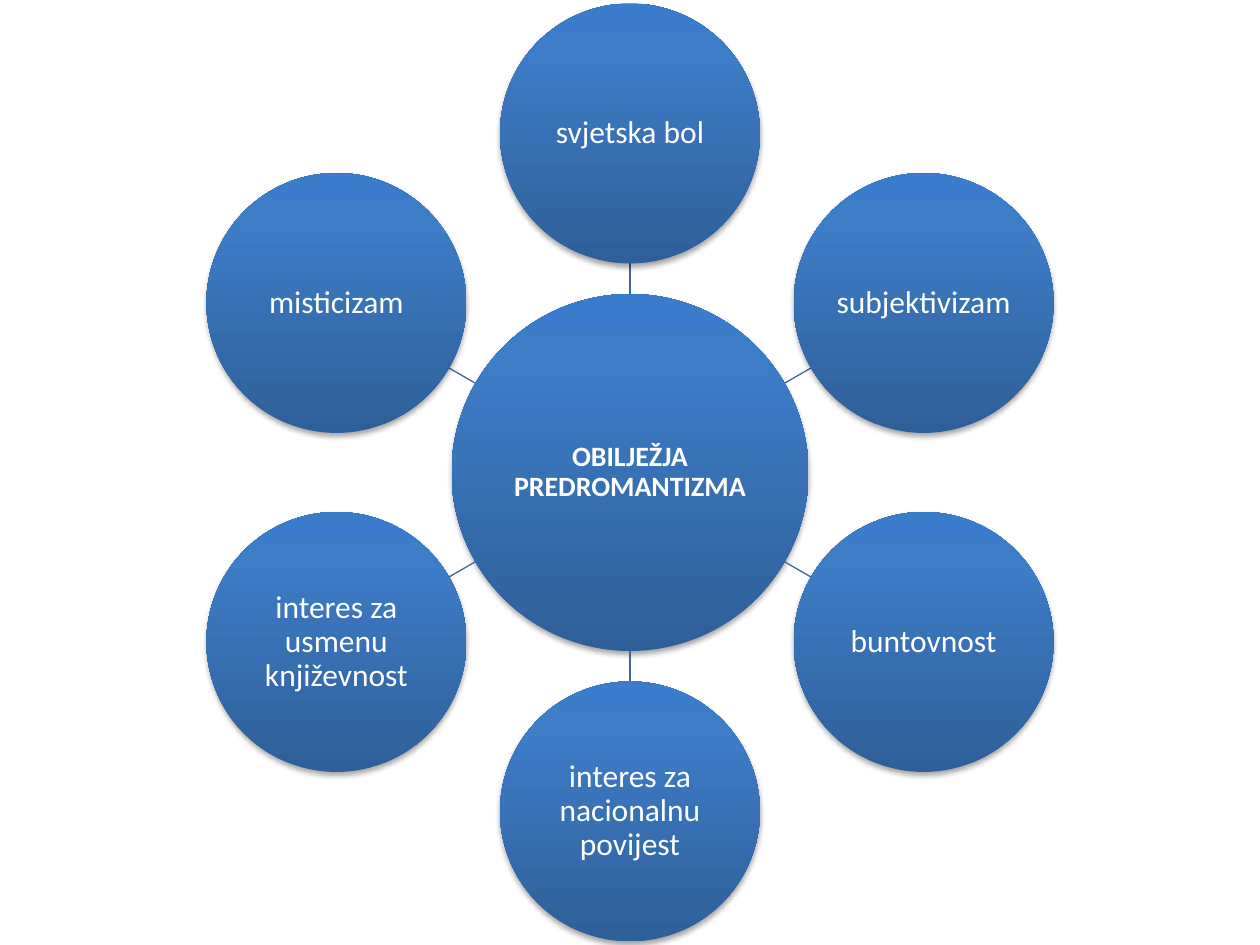
import copy
import dataclasses
import math

import pptx
import pptx.dml.color
import pptx.enum.shapes
import pptx.enum.text
import pptx.oxml
import pptx.oxml.ns
import pptx.slide
import pptx.util
from lxml import etree

EMU_PER_PX = 914400 / 126
SLIDE_WIDTH, SLIDE_HEIGHT = 1260, 945
ORBIT = 339  # from the hub's centre to each feature's centre
TEXT_INSET = 1


@dataclasses.dataclass(frozen=True)
class Theme:
    font: str = "Calibri"
    text: str = "FFFFFF"
    spoke: str = "3F6797"
    gradient: tuple[tuple[float, str], ...] = (
        (0, "2F5F99"), (0.8, "3D7CC7"), (1, "3A7CCB"))
    shadow: str = "000000"
    hub_size: int = 16
    feature_size: int = 18
    line_spacing: float = 0.9
    spoke_width: float = 0.75


@dataclasses.dataclass(frozen=True)
class Circle:
    label: str
    x: float
    y: float
    diameter: int
    font_size: int
    bold: bool = False


THEME = Theme()
HUB = Circle("OBILJEŽJA PREDROMANTIZMA", SLIDE_WIDTH / 2, SLIDE_HEIGHT / 2,
             357, THEME.hub_size, bold=True)
FEATURE_DIAMETER = 260
FEATURES = (  # clockwise from the top
    "svjetska bol",
    "subjektivizam",
    "buntovnost",
    "interes za nacionalnu povijest",
    "interes za usmenu književnost",
    "misticizam",
)


def px(length: float) -> pptx.util.Emu:
    return pptx.util.Emu(round(length * EMU_PER_PX))


def rgb(value: str) -> pptx.dml.color.RGBColor:
    return pptx.dml.color.RGBColor.from_string(value)


def around_hub(angle: float, distance: float) -> tuple[float, float]:
    return HUB.x + distance * math.cos(angle), HUB.y + distance * math.sin(angle)


def fill_with_gradient(shape) -> None:
    shape.fill.gradient()
    shape.fill.gradient_angle = 90
    stop_list = shape.element.spPr.find(".//" + pptx.oxml.ns.qn("a:gsLst"))
    stop_list.append(copy.deepcopy(stop_list[-1]))
    for stop, (position, color) in zip(shape.fill.gradient_stops, THEME.gradient):
        stop.position = position
        stop.color.rgb = rgb(color)


def cast_shadow(shape) -> None:
    shape.shadow.inherit = False
    effects = shape.element.spPr.find(pptx.oxml.ns.qn("a:effectLst"))
    blur, distance = pptx.util.Pt(3.1), pptx.util.Pt(1.8)
    effects.append(pptx.oxml.parse_xml(
        f'<a:outerShdw {pptx.oxml.ns.nsdecls("a")} blurRad="{blur}" '
        f'dist="{distance}" dir="5400000" rotWithShape="0">'
        f'<a:srgbClr val="{THEME.shadow}"><a:alpha val="35000"/></a:srgbClr>'
        '</a:outerShdw>'))


def draw_circle(slide: pptx.slide.Slide, circle: Circle) -> None:
    radius = circle.diameter / 2
    disc = slide.shapes.add_shape(
        pptx.enum.shapes.MSO_SHAPE.OVAL, px(circle.x - radius),
        px(circle.y - radius), px(circle.diameter), px(circle.diameter))
    fill_with_gradient(disc)
    disc.line.fill.background()
    cast_shadow(disc)

    frame = disc.text_frame
    frame.word_wrap = True
    frame.vertical_anchor = pptx.enum.text.MSO_ANCHOR.MIDDLE
    frame.margin_left = frame.margin_right = px(TEXT_INSET)
    frame.margin_top = frame.margin_bottom = px(TEXT_INSET)
    label = frame.paragraphs[0]
    label.text = circle.label
    label.alignment = pptx.enum.text.PP_ALIGN.CENTER
    label.line_spacing = THEME.line_spacing
    label.font.name = THEME.font
    label.font.size = pptx.util.Pt(circle.font_size)
    label.font.bold = circle.bold
    label.font.color.rgb = rgb(THEME.text)


def draw_spoke(slide: pptx.slide.Slide, angle: float) -> None:
    """Join the hub's rim to the rim of the feature at this angle."""
    start = around_hub(angle, HUB.diameter / 2)
    end = around_hub(angle, ORBIT - FEATURE_DIAMETER / 2)
    spoke = slide.shapes.add_connector(
        pptx.enum.shapes.MSO_CONNECTOR.STRAIGHT, *map(px, start + end))
    spoke.line.color.rgb = rgb(THEME.spoke)
    spoke.line.width = pptx.util.Pt(THEME.spoke_width)
    etree.SubElement(spoke.element.spPr, pptx.oxml.ns.qn("a:effectLst"))


def main() -> None:
    presentation = pptx.Presentation()
    presentation.slide_width = px(SLIDE_WIDTH)
    presentation.slide_height = px(SLIDE_HEIGHT)
    slide = presentation.slides.add_slide(presentation.slide_layouts[6])

    draw_circle(slide, HUB)
    for index, label in enumerate(FEATURES):
        angle = math.tau * index / len(FEATURES) - math.pi / 2
        draw_spoke(slide, angle)
        draw_circle(slide, Circle(label, *around_hub(angle, ORBIT),
                                  FEATURE_DIAMETER, THEME.feature_size))
    presentation.save("out.pptx")


if __name__ == "__main__":
    main()
